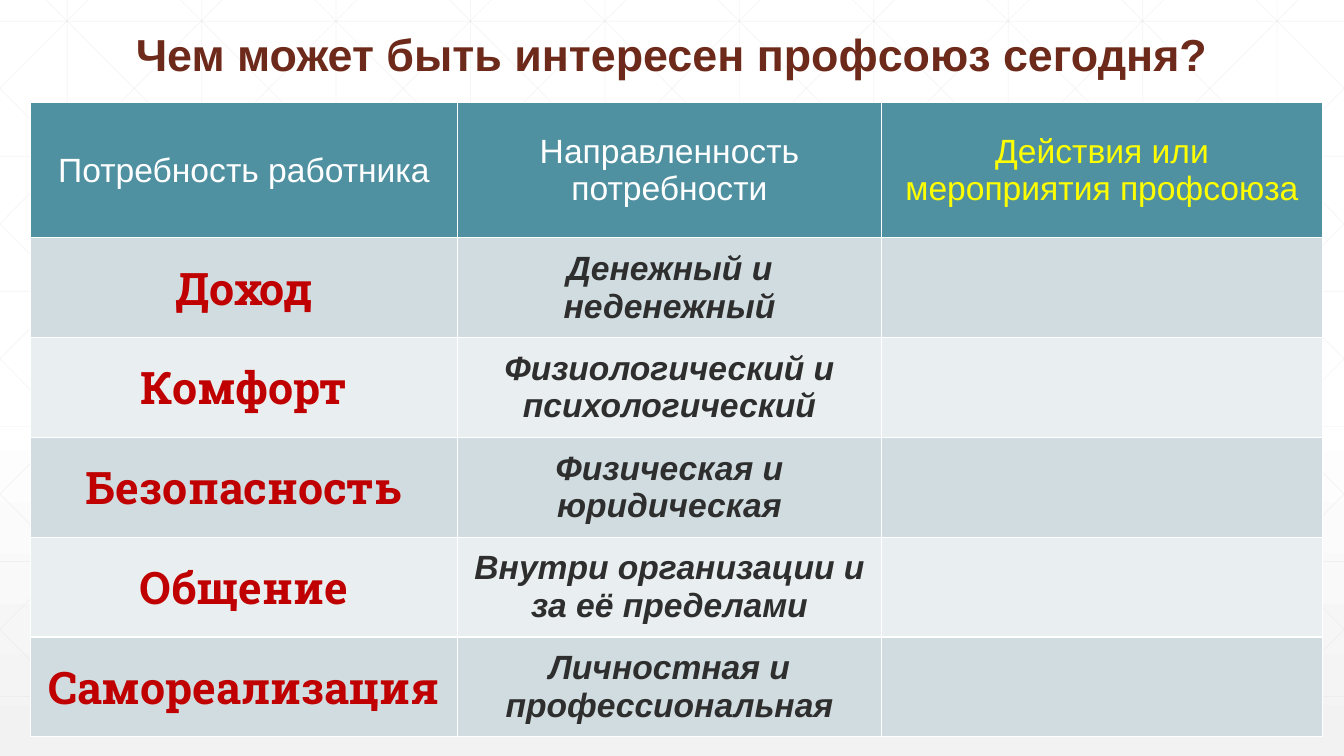
from lxml import etree
from pptx import Presentation
from pptx.dml.color import RGBColor
from pptx.enum.shapes import MSO_CONNECTOR
from pptx.enum.text import MSO_ANCHOR, MSO_AUTO_SIZE, PP_ALIGN
from pptx.oxml.ns import qn
from pptx.util import Inches, Pt

STRAIGHT = MSO_CONNECTOR.STRAIGHT
CENTER = PP_ALIGN.CENTER
MIDDLE, BOTTOM = MSO_ANCHOR.MIDDLE, MSO_ANCHOR.BOTTOM
NO_FIT = MSO_AUTO_SIZE.NONE

WIDTH, HEIGHT = 13.33, 7.5
TOP, END = -0.21, 7.29
STEP = 4 / 3
SLOPE = 0.994
BANDS = ("D0DCE0", "E9EEF0")
COLS = (4.24, 4.2, 4.38)
HEADS = (
    ("Потребность работника", "FFFFFF"),
    ("Направленность потребности", "FFFFFF"),
    ("Действия или мероприятия профсоюза", "FFFF00"),
)
NEEDS = (
    ("Доход", "Денежный и неденежный"),
    ("Комфорт", "Физиологический и психологический"),
    ("Безопасность", "Физическая и юридическая"),
    ("Общение", "Внутри организации и за её пределами"),
    ("Самореализация", "Личностная и профессиональная"),
)


def color(code):
    return RGBColor.from_string(code)


def write(frame, text, size, code, face="Arial", bold=False, italic=False):
    par = frame.paragraphs[0]
    par.alignment = CENTER
    run = par.add_run()
    run.text = text
    font = run.font
    font.name, font.size = face, Pt(size)
    font.bold, font.italic = bold, italic
    font.color.rgb = color(code)
    return par


def paint(slide):
    """Give the slide a white to light grey gradient."""
    fill = slide.background.fill
    fill.gradient()
    fill.gradient_angle = 270
    for stop, place, code in zip(fill.gradient_stops, (0.53, 1), ("FFFFFF", "F2F2F2")):
        stop.position = place
        stop.color.rgb = color(code)


def add_line(slide, x1, y1, x2, y2):
    """Draw a thin grey line at 25% opacity."""
    line = slide.shapes.add_connector(
        STRAIGHT, Inches(x1), Inches(y1), Inches(x2), Inches(y2))
    line.line.width = Pt(0.5)
    line.line.color.rgb = color("D9D9D9")
    props = line._element.spPr
    tint = next(props.iter(qn("a:srgbClr")))
    etree.SubElement(tint, qn("a:alpha")).set("val", "25000")
    etree.SubElement(props, qn("a:effectLst"))


def add_grid(slide):
    """Draw upright, level and crossing slanted lines, cut at the slide sides."""
    for i in range(10):
        x = STEP * (i + 0.5)
        add_line(slide, x, TOP, x, END)
    for i in range(6):
        y = 0.21 + 1.34 * i
        add_line(slide, 0, y, WIDTH, y)
    for i in range(-5, 10):
        start = 0.25 + STEP * i
        left = max(start, 0)
        right = min(start + SLOPE * (END - TOP), WIDTH)
        y1, y2 = (TOP + (x - start) / SLOPE for x in (left, right))
        add_line(slide, left, y1, right, y2)
        add_line(slide, WIDTH - left, y1, WIDTH - right, y2)


def set_title(slide, text):
    title = slide.shapes.title
    title.left, title.top = Inches(0.68), Inches(0.21)
    title.width, title.height = Inches(11.97), Inches(0.65)
    frame = title.text_frame
    frame.word_wrap = True
    frame.auto_size = NO_FIT
    frame.vertical_anchor = BOTTOM
    write(frame, text, 32, "6D2A1A", bold=True).line_spacing = 0.9
    slide.shapes._spTree.append(title._element)


def add_needs(slide):
    """Add the table; its default style draws the white borders."""
    table = slide.shapes.add_table(
        len(NEEDS) + 1, len(COLS), Inches(0.3), Inches(1.02),
        Inches(sum(COLS)), Inches(6.27)).table
    for col, width in zip(table.columns, COLS):
        col.width = Inches(width)
    for i, row in enumerate(table.rows):
        row.height = Inches(0.99 if i else 1.34)
        for cell in row.cells:
            cell.fill.solid()
            cell.fill.fore_color.rgb = color(BANDS[(i - 1) % 2] if i else "4F91A1")
            cell.vertical_anchor = MIDDLE
    for j, (text, code) in enumerate(HEADS):
        write(table.cell(0, j).text_frame, text, 24, code)
    for i, (need, focus) in enumerate(NEEDS, 1):
        write(table.cell(i, 0).text_frame, need, 32, "C00000", "Roboto Slab", True)
        write(table.cell(i, 1).text_frame, focus, 24, "2D2E2D", bold=True, italic=True)


def main():
    deck = Presentation()
    deck.slide_width, deck.slide_height = Inches(WIDTH), Inches(HEIGHT)
    slide = deck.slides.add_slide(deck.slide_layouts[5])
    paint(slide)
    add_grid(slide)
    set_title(slide, "Чем может быть интересен профсоюз сегодня?")
    add_needs(slide)
    deck.save("out.pptx")


if __name__ == "__main__":
    main()
